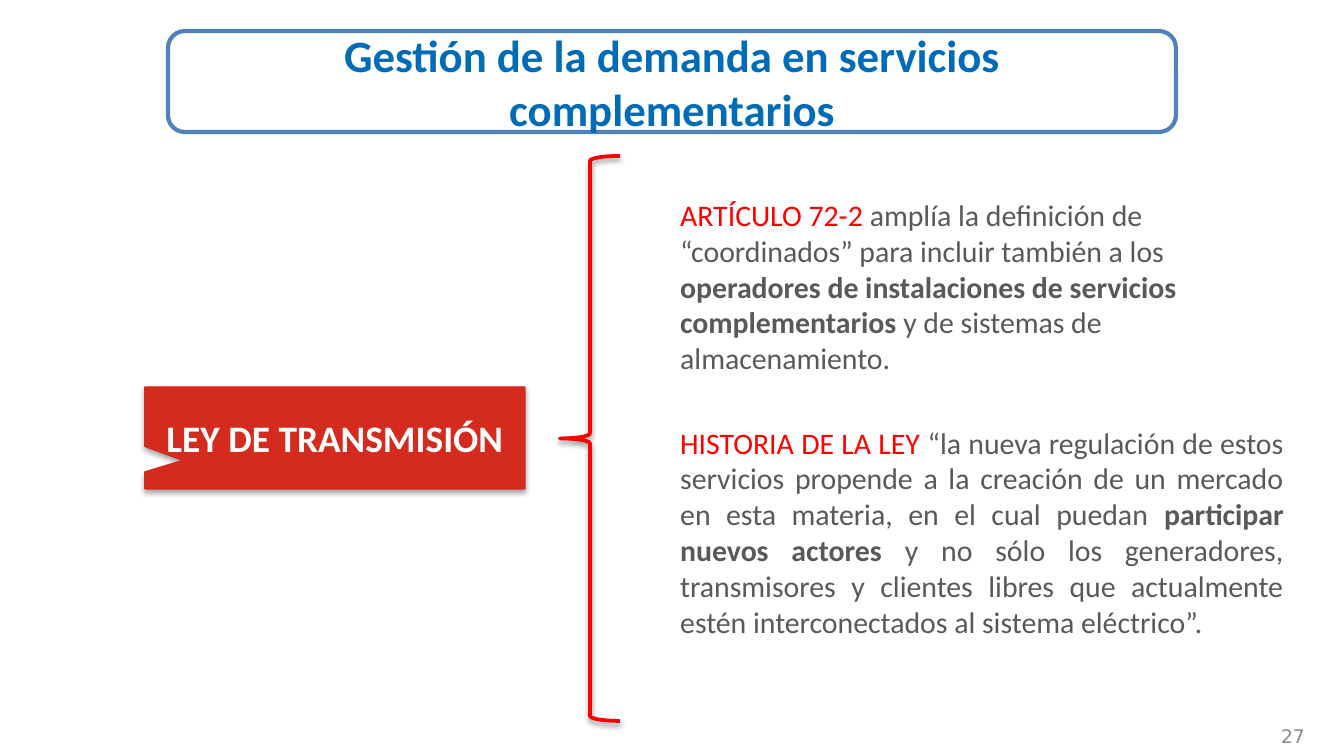
from lxml import etree
from pptx import Presentation
from pptx import util as u
from pptx.dml.color import RGBColor
from pptx.enum import shapes, text
from pptx.oxml.ns import qn

# Content
TITLE = "Gestión de la demanda en servicios complementarios"
LAW = "LEY DE TRANSMISIÓN"
PAGE_NUMBER = "27"
# Each paragraph: alignment, space before in points, runs of (text, colour, bold)
DETAILS = [
    (text.PP_ALIGN.LEFT, 0, [
        ("ARTÍCULO 72-2 ", "red", False),
        ("amplía la definición de “coordinados” para incluir también a los ", "gray", False),
        ("operadores de instalaciones de servicios complementarios", "gray", True),
        (" y de sistemas de almacenamiento.", "gray", False),
    ]),
    (text.PP_ALIGN.JUSTIFY, 26, [
        ("HISTORIA DE LA LEY ", "red", False),
        ("“la nueva regulación de estos servicios propende a la creación de un mercado "
         "en esta materia, en el cual puedan ", "gray", False),
        ("participar nuevos actores", "gray", True),
        (" y no sólo los generadores, transmisores y clientes libres que actualmente "
         "estén interconectados al sistema eléctrico”.", "gray", False),
    ]),
]

COLORS = {"white": "FFFFFF", "frame": "4F81BD", "title": "006CB7", "red": "FF0000",
          "law": "D52B1E", "gray": "595959", "number": "898989"}

# Left, top, width, height in px
TITLE_BOX = (168, 31, 1008, 101)
BRACE_BOX = (560, 156, 60, 565)
LAW_BOX = (145, 387, 380, 102)
DETAILS_BOX = (667, 190, 630, 498)
NUMBER_BOX = (1005, 726, 313, 21)
EMU_PER_PX = 914400 / 134.4


def px(*lengths):
    return [u.Emu(round(length * EMU_PER_PX)) for length in lengths]


def color(name):
    return RGBColor.from_string(COLORS[name])


def style(font, size, name, bold=False, face="Calibri"):
    font.size, font.bold, font.name = u.Pt(size), bold, face
    font.color.rgb = color(name)


def add_shape(kind, box, line, width, fill=None):
    shape = slide.shapes.add_shape(kind, *px(*box))
    shape.shadow.inherit = False
    if fill:
        shape.fill.solid()
        shape.fill.fore_color.rgb = color(fill)
    else:
        shape.fill.background()
    shape.line.color.rgb = color(line)
    shape.line.width = u.Pt(width)
    return shape


def add_shadow(shape, opacity, distance):
    effects = shape._element.spPr.find(qn("a:effectLst"))
    shadow = etree.SubElement(effects, qn("a:outerShdw"), blurRad=str(u.Pt(3.1)),
                              dist=str(u.Pt(distance)), dir="5400000", rotWithShape="0")
    black = etree.SubElement(shadow, qn("a:srgbClr"), val="000000")
    etree.SubElement(black, qn("a:alpha"), val=str(opacity * 1000))


def write_line(shape, words, align, *font_style, **options):
    frame = shape.text_frame
    frame.word_wrap = True
    frame.vertical_anchor = text.MSO_ANCHOR.MIDDLE
    paragraph = frame.paragraphs[0]
    paragraph.text = words
    paragraph.alignment = align
    style(paragraph.font, *font_style, **options)


presentation = Presentation()
presentation.slide_width, presentation.slide_height = px(1344, 756)
slide = presentation.slides.add_slide(presentation.slide_layouts[6])

# Details of the law
details = slide.shapes.add_textbox(*px(*DETAILS_BOX)).text_frame
details.word_wrap = True
for index, (align, space, runs) in enumerate(DETAILS):
    paragraph = details.add_paragraph() if index else details.paragraphs[0]
    paragraph.alignment = align
    paragraph.space_before = u.Pt(space)
    for words, name, bold in runs:
        run = paragraph.add_run()
        run.text = words
        style(run.font, 16, name, bold)

# Title frame
title = add_shape(shapes.MSO_SHAPE.ROUNDED_RECTANGLE, TITLE_BOX, "frame", 2.25, "white")
write_line(title, TITLE, text.PP_ALIGN.CENTER, 24, "title", True)

# Brace between the law and its details
brace = add_shape(shapes.MSO_SHAPE.LEFT_BRACE, BRACE_BOX, "red", 2)
add_shadow(brace, 38, 1.6)

# Page number
number = slide.shapes.add_textbox(*px(*NUMBER_BOX))
write_line(number, PAGE_NUMBER, text.PP_ALIGN.RIGHT, 10, "number", face="DejaVu Sans")

# Law callout
law = add_shape(shapes.MSO_SHAPE.RECTANGULAR_CALLOUT, LAW_BOX, "law", 0.75, "law")
law.adjustments[0], law.adjustments[1] = -0.4, 0.22
add_shadow(law, 35, 1.8)
write_line(law, LAW, text.PP_ALIGN.CENTER, 20, "white", True)

presentation.save("out.pptx")
